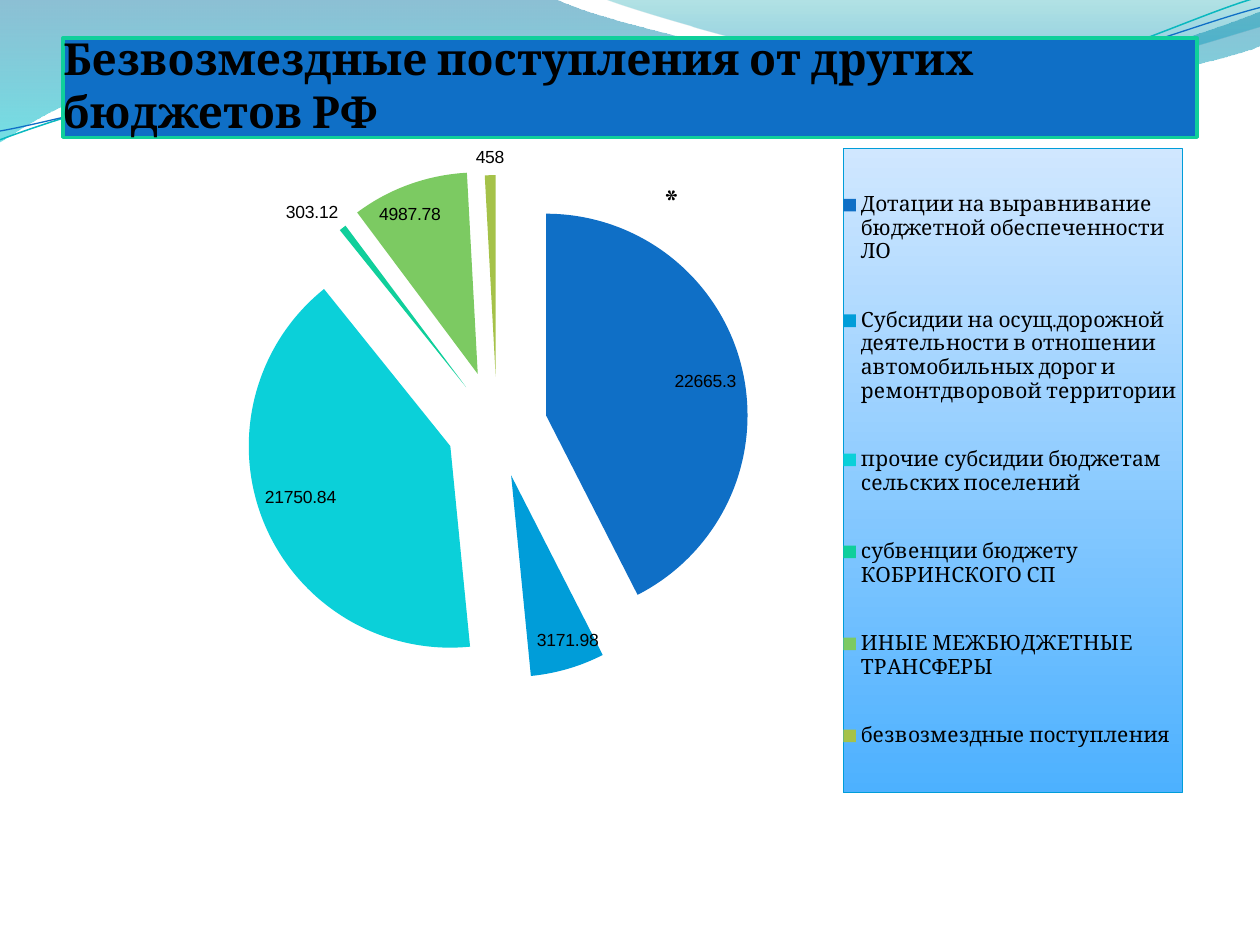
"""Build a slide with an exploded pie chart of budget transfers under a wave header."""
import pptx
import pptx.chart.data
import pptx.dml.color
import pptx.enum.chart
import pptx.enum.text
import pptx.enum.shapes
import pptx.oxml
import pptx.util
from pptx.oxml.ns import nsdecls, qn

RGB = pptx.dml.color.RGBColor
Inches, Pt = pptx.util.Inches, pptx.util.Pt

BLACK = RGB(0x00, 0x00, 0x00)
BLUE = RGB(0x0F, 0x6F, 0xC6)
SKY = RGB(0x00, 0x9D, 0xD9)
TURQUOISE = RGB(0x0B, 0xD0, 0xD9)
MINT = RGB(0x10, 0xCF, 0x9B)
GREEN = RGB(0x7C, 0xCA, 0x62)
OLIVE = RGB(0xA5, 0xC2, 0x49)
TEAL = RGB(0x0A, 0xB8, 0xBF)
DEEP_SEA, AQUA = RGB(0x00, 0x74, 0xA1), RGB(0x00, 0xC6, 0xCF)
LAGOON, OCEAN = RGB(0x00, 0xA1, 0xA9), RGB(0x00, 0x8B, 0xBF)
LEGEND_TOP, LEGEND_BOTTOM = RGB(0xD0, 0xE7, 0xFF), RGB(0x4D, 0xB1, 0xFF)

FONT = "Cambria"
TITLE = "Безвозмездные поступления от других бюджетов РФ"
SERIES_NAME = "*"
TRANSFERS = [
    ("Дотации на выравнивание бюджетной обеспеченности ЛО", 22665.3, BLUE, 25),
    ("Субсидии на осущ.дорожной деятельности в отношении автомобильных дорог "
     "и ремонтдворовой территории ", 3171.98, SKY, 25),
    ("прочие субсидии бюджетам сельских поселений", 21750.84, TURQUOISE, 25),
    ("субвенции бюджету КОБРИНСКОГО СП", 303.12, MINT, 25),
    ("ИНЫЕ МЕЖБЮДЖЕТНЫЕ ТРАНСФЕРЫ", 4987.78, GREEN, 28),
    ("безвозмездные поступления", 458, OLIVE, 25),
]
CHART_WIDTH, CHART_HEIGHT = 8.33, 5.31

WAVES = [
    ([(0, 0), (4.4, -0.01), (4.76, 0.17, 6.64, 0.63, 7.58, 0.63),
      (8.53, 0.63, 9.58, 0.26, 10, 0.09), (10.01, 0.36),
      (9.83, 0.44, 8.7, 0.76, 7.46, 0.75), (6.22, 0.75, 3.82, 0.28, 2.57, 0.34),
      (1.29, 0.36, 0.46, 0.83, -0.01, 1.13)],
     [(0, DEEP_SEA, 45), (100, AQUA, 55)]),
    ([(4.79, -0.01), (5.09, 0.11, 6.82, 0.62, 7.69, 0.65),
      (8.56, 0.69, 9.61, 0.32, 10, 0.21), (10, 0)],
     [(0, LAGOON, 30), (80, OCEAN, 45)]),
]
RIPPLES = [
    ([(0, 1.11), (0.48, 0.93, 1.58, 0.57, 2.77, 0.52),
      (3.95, 0.47, 5.93, 0.89, 7.13, 0.8), (8.33, 0.71, 9.38, 0.15, 9.98, -0.02)],
     TEAL, 0.85),
    ([(0, 1.04), (0.47, 0.96, 1.64, 0.61, 2.83, 0.56),
      (4.03, 0.51, 5.97, 0.84, 7.17, 0.75), (8.36, 0.67, 9.41, 0.21, 10, 0.06)],
     BLUE, 0.75),
]
UNITS_PER_INCH = 1000


def gradient(stops):
    """Return a top-to-bottom gradient fill element."""
    marks = "".join(
        f'<a:gs pos="{place * 1000}"><a:srgbClr val="{color}">'
        f'<a:alpha val="{alpha * 1000}"/></a:srgbClr></a:gs>'
        for place, color, alpha in stops)
    return pptx.oxml.parse_xml(
        f'<a:gradFill {nsdecls("a")} rotWithShape="1"><a:gsLst>{marks}</a:gsLst>'
        '<a:lin ang="5400000" scaled="0"/></a:gradFill>')


def add_path(page, path, closed):
    """Draw an outline through the segment ends, then bend its curved segments."""
    units = [[round(number * UNITS_PER_INCH) for number in segment] for segment in path]
    ends = [segment[-2:] for segment in units]
    builder = page.shapes.build_freeform(*ends[0], scale=Inches(1) / UNITS_PER_INCH)
    builder.add_line_segments(ends[1:], close=closed)
    shape = builder.convert_to_shape()
    shape.shadow.inherit = False
    left, top = (min(end[axis] for end in ends) for axis in (0, 1))
    lines = list(shape.element.spPr.iter(qn("a:lnTo")))
    for line, segment in zip(lines, units[1:]):
        if len(segment) == 6:
            points = "".join(f'<a:pt x="{x - left}" y="{y - top}"/>'
                             for x, y in zip(segment[::2], segment[1::2]))
            line.getparent().replace(line, pptx.oxml.parse_xml(
                f'<a:cubicBezTo {nsdecls("a")}>{points}</a:cubicBezTo>'))
    return shape


def add_header(page):
    """Draw the waves, the ripples and the title bar."""
    for path, stops in WAVES:
        wave = add_path(page, path, True)
        wave.line.fill.background()
        wave.element.spPr.find(qn("a:custGeom")).addnext(gradient(stops))
    for path, color, width in RIPPLES:
        ripple = add_path(page, path, False)
        ripple.fill.background()
        ripple.line.color.rgb = color
        ripple.line.width = Pt(width)

    bar = page.shapes.add_shape(
        pptx.enum.shapes.MSO_SHAPE.RECTANGLE, Inches(0.5), Inches(0.3), Inches(9), Inches(0.79))
    bar.shadow.inherit = False
    bar.fill.solid()
    bar.fill.fore_color.rgb = BLUE
    bar.line.color.rgb = MINT
    bar.line.width = Pt(2)
    frame = bar.text_frame
    frame.word_wrap = True
    frame.vertical_anchor = pptx.enum.text.MSO_ANCHOR.BOTTOM
    frame.margin_left = frame.margin_right = frame.margin_bottom = 0
    frame.margin_top = Inches(0.05)
    para = frame.paragraphs[0]
    para.text = TITLE
    para.alignment = pptx.enum.text.PP_ALIGN.LEFT
    set_font(para.font, 25.2, bold=True)


def set_font(font, size, name=FONT, bold=False):
    """Apply black type of the given size and face."""
    font.name, font.size, font.bold = name, Pt(size), bold
    font.color.rgb = BLACK


def place(parent, index, target="", **inches):
    """Give a chart part a manual position measured inside the chart."""
    for layout in parent.findall(qn("c:layout")):
        parent.remove(layout)
    inner = f'<c:layoutTarget val="{target}"/>' if target else ""
    modes = "".join(f'<c:{axis}Mode val="edge"/>' for axis in "xy")
    values = "".join(
        f'<c:{key} val="{length / (CHART_WIDTH if key in "xw" else CHART_HEIGHT)}"/>'
        for key, length in inches.items())
    parent.insert(index, pptx.oxml.parse_xml(
        f'<c:layout {nsdecls("c")}><c:manualLayout>{inner}{modes}{values}'
        '</c:manualLayout></c:layout>'))


def explosion(percent):
    """Return the element that pulls slices out of the pie."""
    return pptx.oxml.parse_xml(f'<c:explosion {nsdecls("c")} val="{percent}"/>')


def add_pie(page):
    """Add the exploded pie with its title, labels and legend."""
    data = pptx.chart.data.CategoryChartData()
    data.categories = [transfer[0] for transfer in TRANSFERS]
    data.add_series(SERIES_NAME, [transfer[1] for transfer in TRANSFERS])
    chart = page.shapes.add_chart(
        pptx.enum.chart.XL_CHART_TYPE.PIE, Inches(1.17), Inches(1.17),
        Inches(CHART_WIDTH), Inches(CHART_HEIGHT), data).chart
    set_font(chart.font, 18)

    chart.has_title = True
    para = chart.chart_title.text_frame.paragraphs[0]
    para.text = SERIES_NAME
    set_font(para.font, 21.6, bold=True)
    place(chart.chart_title._element, 1, x=4.04, y=0.18)

    plot = chart.plots[0]
    plot.vary_by_categories = True
    place(plot._element.getparent(), 0, "inner", x=0.02, y=0.22, w=5.51, h=4)
    series = plot.series[0]
    series._element.find(qn("c:tx")).addnext(explosion(25))
    for index, (_, _, color, pull) in enumerate(TRANSFERS):
        slice_format = series.points[index].format
        slice_format.fill.solid()
        slice_format.fill.fore_color.rgb = color
        point = series._element.findall(qn("c:dPt"))[index]
        point.find(qn("c:spPr")).addprevious(explosion(pull))
    labels = series.data_labels
    labels.show_value = True
    labels.position = pptx.enum.chart.XL_LABEL_POSITION.BEST_FIT
    set_font(labels.font, 10, "Arial")

    chart.has_legend = True
    legend = chart.legend
    legend.position = pptx.enum.chart.XL_LEGEND_POSITION.RIGHT
    legend.include_in_layout = False
    set_font(legend.font, 12)
    place(legend._element, 1, x=5.52, y=0.01, w=2.69, h=5.11)
    panel = pptx.oxml.parse_xml(
        f'<c:spPr {nsdecls("c", "a")}><a:ln w="{Pt(0.25)}"><a:solidFill>'
        f'<a:srgbClr val="{SKY}"/></a:solidFill></a:ln></c:spPr>')
    panel.insert(0, gradient([(0, LEGEND_TOP, 100), (100, LEGEND_BOTTOM, 100)]))
    legend._element.find(qn("c:txPr")).addprevious(panel)


def main():
    """Build and save the deck."""
    deck = pptx.Presentation()
    deck.slide_width, deck.slide_height = Inches(10), Inches(7.5)
    page = deck.slides.add_slide(deck.slide_layouts[6])
    add_header(page)
    add_pie(page)
    deck.save("out.pptx")


if __name__ == "__main__":
    main()
